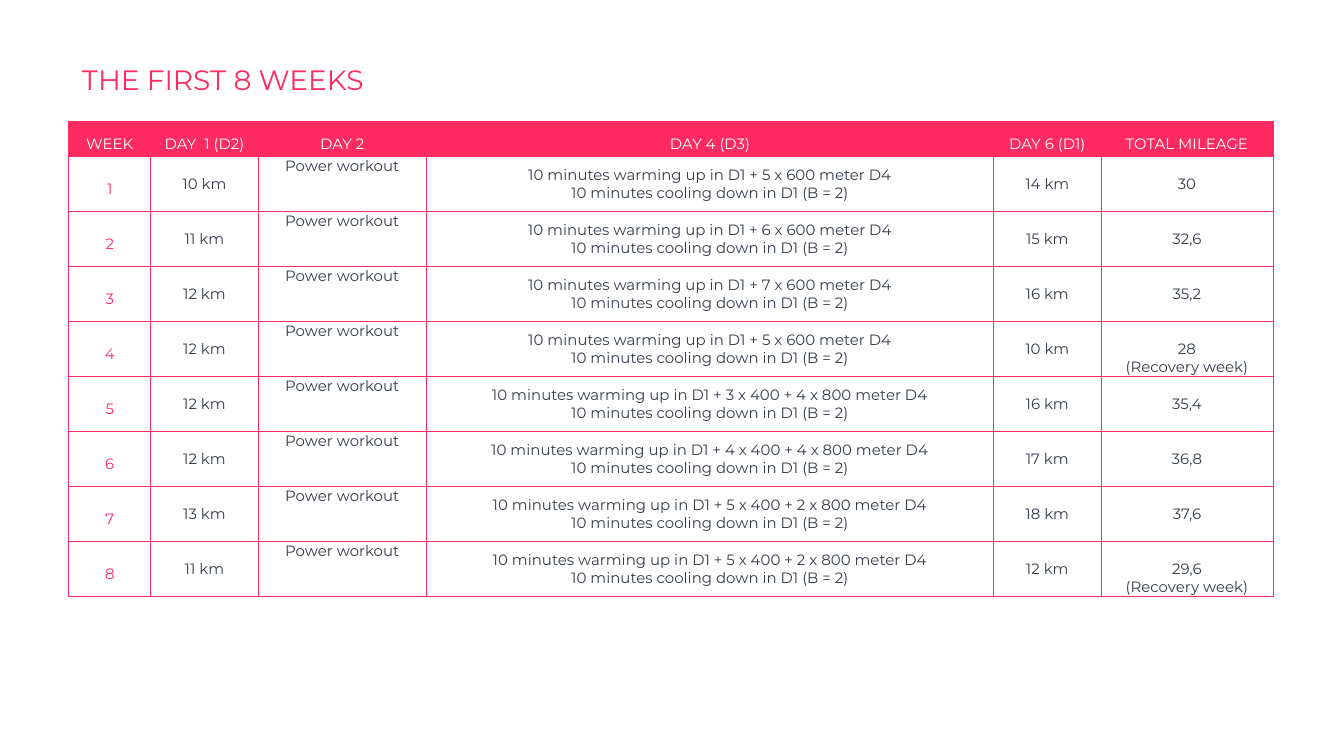
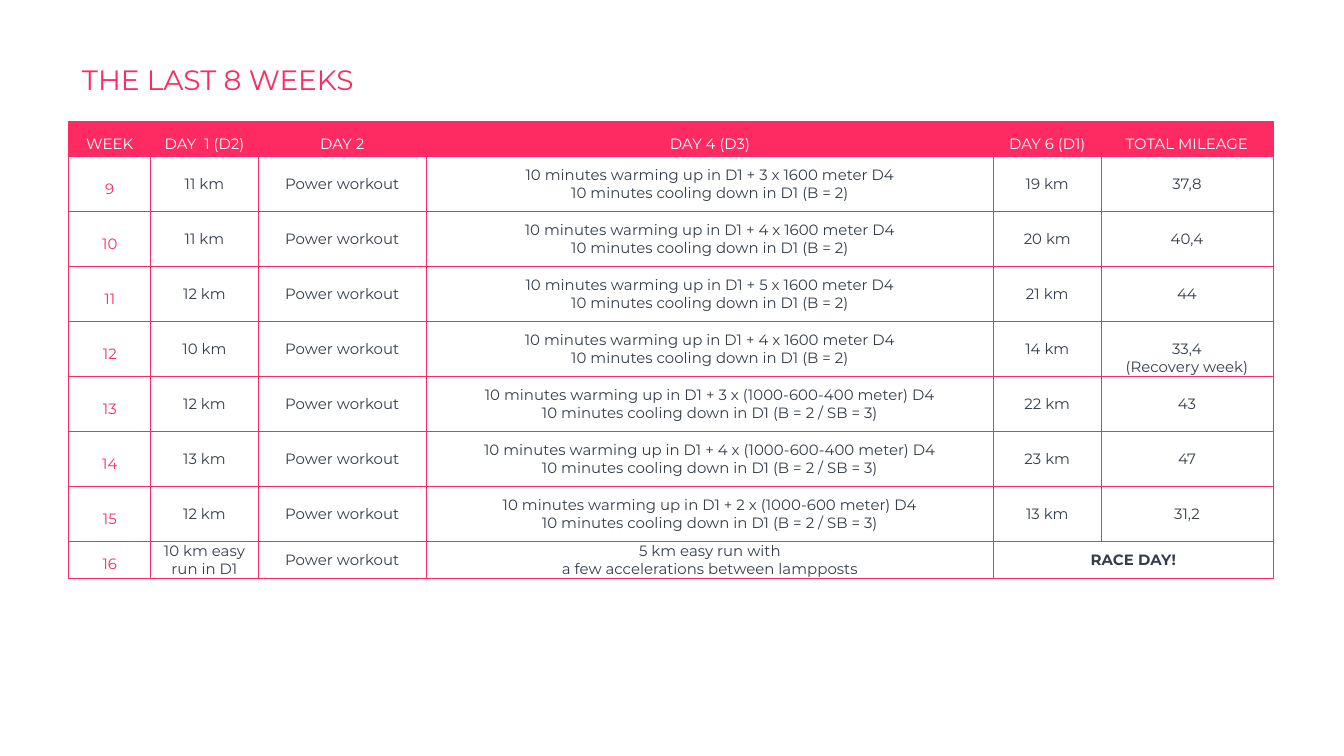
"""Builds the two slides of a sixteen-week running schedule."""
from dataclasses import dataclass

from lxml.etree import SubElement
from pptx import Presentation
from pptx.dml.color import RGBColor
from pptx.enum.text import MSO_ANCHOR, MSO_AUTO_SIZE, PP_ALIGN
from pptx.oxml.ns import qn
from pptx.slide import Slide
from pptx.table import _Cell
from pptx.util import Cm, Length, Pt


@dataclass(frozen=True)
class Theme:
    """Colours, font and sizes shared by the slides."""
    accent: RGBColor = RGBColor(0xFD, 0x2B, 0x61)
    ink: RGBColor = RGBColor(0x34, 0x3D, 0x49)
    white: RGBColor = RGBColor(0xFF, 0xFF, 0xFF)
    font: str = "Montserrat"
    title_size: Length = Pt(15)
    table_size: Length = Pt(8)
    thin: Length = Pt(0.5)
    thick: Length = Pt(0.75)
    loose: float = 1.5


@dataclass(frozen=True)
class Week:
    """One training week; without a total it ends in the race."""
    day_one: str
    day_four: str
    day_six: str
    total: str = ""
    recovery: bool = False


@dataclass(frozen=True)
class Schedule:
    """One slide: its title, first week number and weeks."""
    title: str
    first_week: int
    weeks: list[Week]
    workout_anchor: MSO_ANCHOR = MSO_ANCHOR.MIDDLE


@dataclass(frozen=True)
class CellStyle:
    """Look of the text and fill of a table cell."""
    color: RGBColor = Theme.ink
    fill: RGBColor | None = None
    line_spacing: float = 1.0
    bold: bool = False
    anchor: MSO_ANCHOR = MSO_ANCHOR.MIDDLE


THEME = Theme()
LEFT = Cm(1.3)
HEADERS = ["WEEK", "DAY  1 (D2)", "DAY 2", "DAY 4 (D3)", "DAY 6 (D1)", "TOTAL MILEAGE"]
COLUMN_WIDTHS = [Cm(width) for width in (1.55, 2.03, 3.18, 10.72, 2.03, 3.25)]
HEADER_HEIGHT, WEEK_HEIGHT, RACE_HEIGHT = Cm(0.66), Cm(1.04), Cm(0.69)
HEADER_STYLE = CellStyle(THEME.white, THEME.accent, THEME.loose)
NUMBER_STYLE = CellStyle(THEME.accent, line_spacing=THEME.loose)
BODY_STYLE = CellStyle()


def intervals(sets: str, rest: str = "B = 2") -> str:
    """Return the two lines of an interval session."""
    return f"10 minutes warming up in D1 + {sets} D4\n10 minutes cooling down in D1 ({rest})"


def pyramid(sets: str) -> str:
    """Return an interval session with a rest between series."""
    return intervals(sets, "B = 2 / SB = 3")


SCHEDULES = [
    Schedule("THE FIRST 8 WEEKS", 1, [
        Week("10 km", intervals("5 x 600 meter"), "14 km", "30"),
        Week("11 km", intervals("6 x 600 meter"), "15 km", "32,6"),
        Week("12 km", intervals("7 x 600 meter"), "16 km", "35,2"),
        Week("12 km", intervals("5 x 600 meter"), "10 km", "28", True),
        Week("12 km", intervals("3 x 400 + 4 x 800 meter"), "16 km", "35,4"),
        Week("12 km", intervals("4 x 400 + 4 x 800 meter"), "17 km", "36,8"),
        Week("13 km", intervals("5 x 400 + 2 x 800 meter"), "18 km", "37,6"),
        Week("11 km", intervals("5 x 400 + 2 x 800 meter"), "12 km", "29,6", True),
    ], MSO_ANCHOR.TOP),
    Schedule("THE LAST 8 WEEKS", 9, [
        Week("11 km", intervals("3 x 1600 meter"), "19 km", "37,8"),
        Week("11 km", intervals("4 x 1600 meter"), "20 km", "40,4"),
        Week("12 km", intervals("5 x 1600 meter"), "21 km", "44"),
        Week("10 km", intervals("4 x 1600 meter"), "14 km", "33,4", True),
        Week("12 km", pyramid("3 x (1000-600-400 meter)"), "22 km", "43"),
        Week("13 km", pyramid("4 x (1000-600-400 meter)"), "23 km", "47"),
        Week("12 km", pyramid("2 x (1000-600 meter)"), "13 km", "31,2"),
        Week("10 km easy run in D1",
             "5 km easy run with\va few accelerations between lampposts", "RACE DAY!"),
    ]),
]


def set_borders(cell: _Cell, widths: dict[str, Length]) -> None:
    """Draw accent-coloured borders around a cell."""
    properties = cell._tc.get_or_add_tcPr()
    for side, width in widths.items():
        line = SubElement(properties, qn(f"a:ln{side}"), w=str(int(width)))
        fill = SubElement(line, qn("a:solidFill"))
        SubElement(fill, qn("a:srgbClr"), val=str(THEME.accent))


def fill_cell(cell: _Cell, text: str, style: CellStyle) -> None:
    """Write and format the text of a cell."""
    cell.margin_left = cell.margin_right = Cm(0.18)
    cell.margin_top = cell.margin_bottom = 0
    cell.vertical_anchor = style.anchor
    if style.fill is None:
        cell.fill.background()
    else:
        cell.fill.solid()
        cell.fill.fore_color.rgb = style.fill
    cell.text_frame.text = text
    for paragraph in cell.text_frame.paragraphs:
        paragraph.alignment = PP_ALIGN.CENTER
        paragraph.line_spacing = style.line_spacing
        paragraph.font.name = THEME.font
        paragraph.font.size = THEME.table_size
        paragraph.font.bold = style.bold
        paragraph.font.color.rgb = style.color


def week_cells(schedule: Schedule, index: int) -> list[tuple[str, CellStyle]]:
    """Return the texts and styles of one week's row."""
    week = schedule.weeks[index]
    total = f"{week.total}\n(Recovery week)" if week.recovery else week.total
    total_style = CellStyle(anchor=MSO_ANCHOR.BOTTOM) if week.recovery else BODY_STYLE
    return [
        (str(schedule.first_week + index), NUMBER_STYLE),
        (week.day_one, BODY_STYLE),
        ("Power workout", CellStyle(anchor=schedule.workout_anchor)),
        (week.day_four, BODY_STYLE),
        (week.day_six, CellStyle(bold=not week.total)),
        (total, total_style),
    ]


def add_title(slide: Slide, text: str) -> None:
    """Add the slide title."""
    shape = slide.shapes.add_textbox(LEFT, Cm(0.94), Cm(20.96), Cm(1.15))
    frame = shape.text_frame
    frame.word_wrap = True
    frame.auto_size = MSO_AUTO_SIZE.SHAPE_TO_FIT_TEXT
    frame.margin_left = frame.margin_right = Cm(0.25)
    frame.margin_top = frame.margin_bottom = Cm(0.25)
    paragraph = frame.paragraphs[0]
    paragraph.text = text
    paragraph.alignment = PP_ALIGN.JUSTIFY
    paragraph.font.name = THEME.font
    paragraph.font.size = THEME.title_size
    paragraph.font.color.rgb = THEME.accent


def add_schedule_table(slide: Slide, schedule: Schedule) -> None:
    """Add the table of training weeks."""
    heights = [HEADER_HEIGHT] + [
        WEEK_HEIGHT if week.total else RACE_HEIGHT for week in schedule.weeks]
    rows = [[(header, HEADER_STYLE) for header in HEADERS]]
    rows += [week_cells(schedule, index) for index in range(len(schedule.weeks))]
    table = slide.shapes.add_table(
        len(rows), len(HEADERS), LEFT, Cm(2.3), sum(COLUMN_WIDTHS), sum(heights)).table
    table.first_row = table.horz_banding = False
    for column, width in zip(table.columns, COLUMN_WIDTHS):
        column.width = width
    last = len(HEADERS) - 1
    for row_index, row in enumerate(rows):
        table.rows[row_index].height = heights[row_index]
        inner = THEME.thin if row_index else THEME.thick
        for column_index, (text, style) in enumerate(row):
            cell = table.cell(row_index, column_index)
            set_borders(cell, {
                "L": inner if column_index else THEME.thin,
                "R": inner if column_index < last else THEME.thin,
                "T": THEME.thick if row_index == 1 else THEME.thin,
                "B": inner,
            })
            fill_cell(cell, text, style)
    for row_index, week in enumerate(schedule.weeks, start=1):
        if not week.total:
            table.cell(row_index, last - 1).merge(table.cell(row_index, last))


def main() -> None:
    """Build and save the presentation."""
    presentation = Presentation()
    presentation.slide_width, presentation.slide_height = Cm(25.4), Cm(14.29)
    for schedule in SCHEDULES:
        slide = presentation.slides.add_slide(presentation.slide_layouts[6])
        add_schedule_table(slide, schedule)
        add_title(slide, schedule.title)
    presentation.save("out.pptx")


if __name__ == "__main__":
    main()
